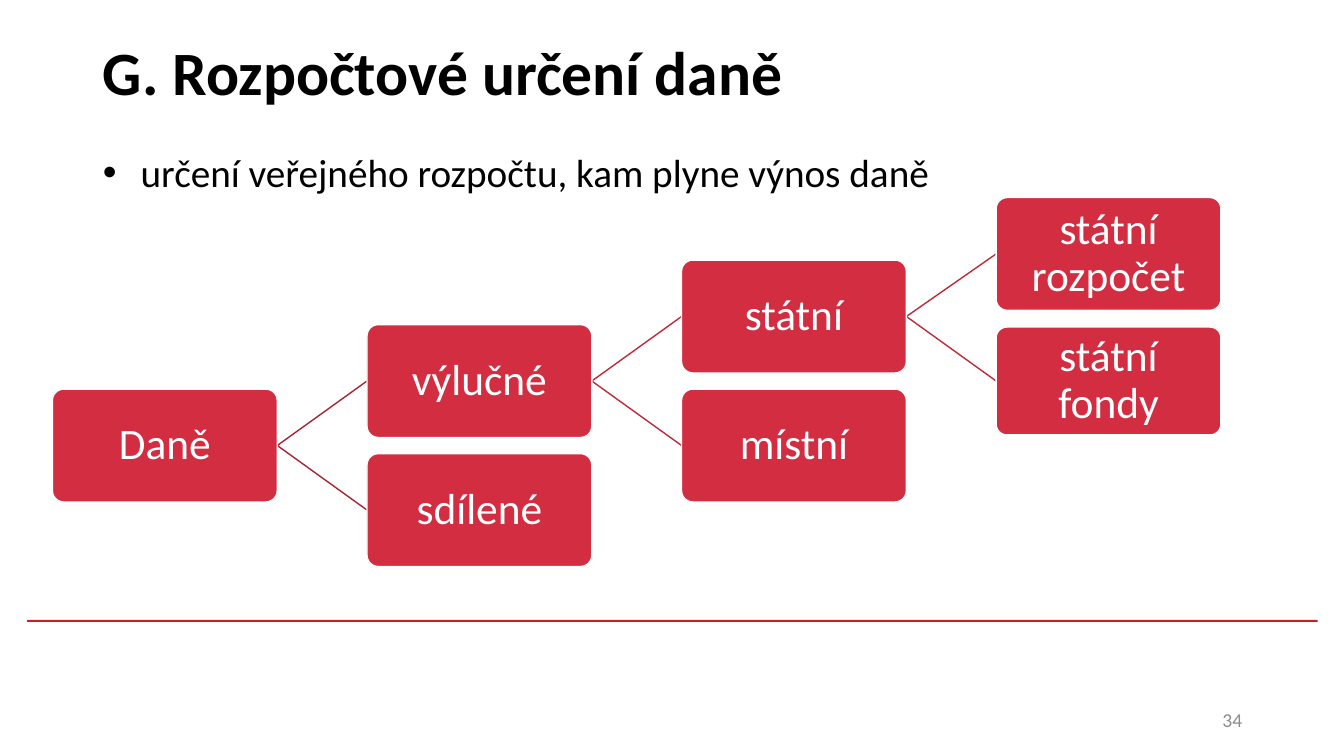
from lxml import etree
from pptx import Presentation
from pptx.dml.color import RGBColor
from pptx.enum.shapes import MSO_CONNECTOR as Link, MSO_SHAPE as Preset
from pptx.enum.text import MSO_ANCHOR as Anchor, PP_ALIGN as Align
from pptx.oxml import parse_xml
from pptx.oxml.ns import nsdecls, qn
from pptx.util import Inches, Pt


def color(value):
    return RGBColor.from_string(value)


def write(frame, text, size, tint, align, anchor):
    frame.word_wrap = True
    frame.vertical_anchor = anchor
    frame.text = text
    paragraph = frame.paragraphs[0]
    paragraph.alignment = align
    paragraph.line_spacing = 0.9
    paragraph.space_before = Pt(0)
    paragraph.font.name = "Calibri"
    paragraph.font.size = Pt(size)
    paragraph.font.color.rgb = color(tint)
    return paragraph


deck = Presentation()
deck.slide_width, deck.slide_height = Inches(13.33), Inches(7.5)
slide = deck.slides.add_slide(deck.slide_layouts[1])
shapes = slide.shapes

divider = shapes.add_shape(
    Preset.RECTANGLE, Inches(0.27), Inches(6.15), Inches(12.8), Inches(0.02))
divider.shadow.inherit = False
divider.fill.solid()
divider.fill.fore_color.rgb = color("CD1F21")
divider.line.fill.background()

heading = shapes.title
heading.left, heading.top = Inches(0.92), Inches(0.02)
heading.width, heading.height = Inches(11.5), Inches(1.45)
headline = write(heading.text_frame, "G. Rozpočtové určení daně",
                 44, "000000", Align.LEFT, Anchor.MIDDLE)
headline.font.bold = True

definition = slide.placeholders[1]
definition.left, definition.top = Inches(0.92), Inches(1.47)
definition.width, definition.height = Inches(11.5), Inches(4.57)
definition.text_frame.text = "určení veřejného rozpočtu, kam plyne výnos daně"
bullet_format = definition.text_frame.paragraphs[0]._p.get_or_add_pPr()
bullet_format.set("marL", str(Inches(0.25)))
bullet_format.set("indent", str(-Inches(0.25)))
for bullet_part in (
    f'<a:buClr {nsdecls("a")}><a:srgbClr val="C00000"/></a:buClr>',
    f'<a:buFont {nsdecls("a")} typeface="Arial"/>',
    f'<a:buChar {nsdecls("a")} char="•"/>',
):
    bullet_format.append(parse_xml(bullet_part))
write(definition.text_frame, definition.text_frame.text,
      28, "000000", Align.LEFT, Anchor.TOP)

LEFT, ROOT_MIDDLE = 0.52, 4.42
COLUMN, ROW = 3.12, 0.64
WIDTH, HEIGHT = 2.23, 1.12

taxes = {
    "Daně": (0, 0, HEIGHT),
    "výlučné": (1, -1, HEIGHT),
    "sdílené": (1, 1, HEIGHT),
    "státní": (2, -2, HEIGHT),
    "místní": (2, 0, HEIGHT),
    "státní rozpočet": (3, -2.97, HEIGHT),
    "státní\vfondy": (3, -1, 1.07),
}
branches = [
    ("Daně", "výlučné", "A82433"),
    ("Daně", "sdílené", "A82433"),
    ("výlučné", "státní", "BF293A"),
    ("výlučné", "místní", "BF293A"),
    ("státní", "státní rozpočet", "BF293A"),
    ("státní", "státní\vfondy", "BF293A"),
]

for parent, child, tint in branches:
    parent_column, parent_row, _ = taxes[parent]
    child_column, child_row, _ = taxes[child]
    branch = shapes.add_connector(
        Link.STRAIGHT,
        Inches(LEFT + parent_column * COLUMN + WIDTH),
        Inches(ROOT_MIDDLE + parent_row * ROW),
        Inches(LEFT + child_column * COLUMN),
        Inches(ROOT_MIDDLE + child_row * ROW))
    branch.line.color.rgb = color(tint)
    branch.line.width = Pt(1)
    etree.SubElement(branch._element.spPr, qn("a:effectLst"))

for tax, (column, row, height) in taxes.items():
    box = shapes.add_shape(
        Preset.ROUNDED_RECTANGLE,
        Inches(LEFT + column * COLUMN),
        Inches(ROOT_MIDDLE + row * ROW - height / 2),
        Inches(WIDTH), Inches(height))
    box.adjustments[0] = 0.1
    box.shadow.inherit = False
    box.fill.solid()
    box.fill.fore_color.rgb = color("D22D40")
    box.line.color.rgb = color("FFFFFF")
    box.line.width = Pt(1)
    label = box.text_frame
    label.margin_left = label.margin_right = Inches(0.02)
    label.margin_top = label.margin_bottom = Inches(0.02)
    write(label, tax, 31, "FFFFFF", Align.CENTER, Anchor.MIDDLE)

page_number = shapes.add_textbox(
    Inches(9.42), Inches(6.95), Inches(3), Inches(0.4))
write(page_number.text_frame, "34", 14, "8C8C8C", Align.RIGHT, Anchor.MIDDLE)

deck.save("out.pptx")
